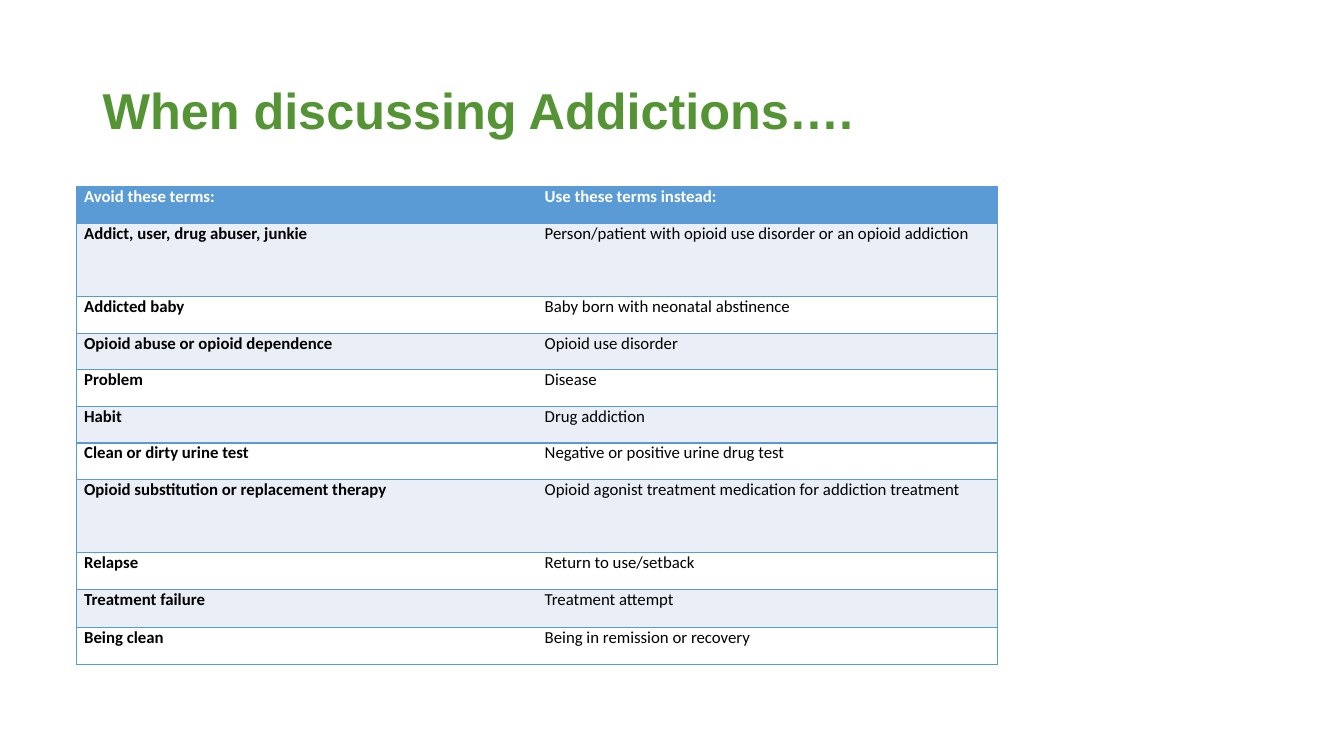
from lxml.etree import SubElement
from pptx import Presentation
from pptx.dml.color import RGBColor
from pptx.enum.text import MSO_ANCHOR
from pptx.oxml.ns import qn
from pptx.util import Pt

GREEN = RGBColor(0x55, 0x94, 0x34)
BLUE = RGBColor(0x5B, 0x9B, 0xD5)
PALE_BLUE = RGBColor(0xEA, 0xEF, 0xF7)
WHITE = RGBColor(0xFF, 0xFF, 0xFF)
BLACK = RGBColor(0x00, 0x00, 0x00)

SINGLE, DOUBLE = 26.15, 52.3
TERMS = [
    ("Avoid these terms:", "Use these terms instead:", SINGLE),
    ("Addict, user, drug abuser, junkie",
     "Person/patient with opioid use disorder or an opioid addiction", DOUBLE),
    ("Addicted baby", "Baby born with neonatal abstinence", SINGLE),
    ("Opioid abuse or opioid dependence", "Opioid use disorder", SINGLE),
    ("Problem", "Disease", SINGLE),
    ("Habit", "Drug addiction", SINGLE),
    ("Clean or dirty urine test", "Negative or positive urine drug test", SINGLE),
    ("Opioid substitution or replacement therapy",
     "Opioid agonist treatment medication for addiction treatment", DOUBLE),
    ("Relapse", "Return to use/setback", SINGLE),
    ("Treatment failure", "Treatment attempt", 27.4),
    ("Being clean", "Being in remission or recovery", SINGLE),
]


def add_run(paragraph, text, font_name, size, color, bold):
    run = paragraph.add_run()
    run.text = text
    run.font.name = font_name
    run.font.size = Pt(size)
    run.font.color.rgb = color
    run.font.bold = bold


def add_borders(cell, inner_side):
    properties = cell._tc.get_or_add_tcPr()
    for side in ("lnL", "lnR", "lnT", "lnB"):
        line = SubElement(properties, qn(f"a:{side}"), w=str(Pt(1)))
        if side == inner_side:
            SubElement(line, qn("a:noFill"))
        else:
            fill = SubElement(line, qn("a:solidFill"))
            SubElement(fill, qn("a:srgbClr"), val=str(BLUE))


presentation = Presentation()
presentation.slide_width = Pt(960)
presentation.slide_height = Pt(540)
slide = presentation.slides.add_slide(presentation.slide_layouts[6])

title = slide.shapes.add_textbox(Pt(66.2), Pt(28.8), Pt(828), Pt(104.4)).text_frame
title.word_wrap = True
title.vertical_anchor = MSO_ANCHOR.MIDDLE
title.paragraphs[0].line_spacing = 0.9
add_run(title.paragraphs[0], "When discussing Addictions….", "Arial", 36, GREEN, True)

total_height = sum(height for _, _, height in TERMS)
terms_table = slide.shapes.add_table(
    len(TERMS), 2, Pt(54.7), Pt(133.4), Pt(658), Pt(total_height)).table

for row, (avoided, preferred, height) in enumerate(TERMS):
    terms_table.rows[row].height = Pt(height)
    is_header = row == 0
    band = BLUE if is_header else PALE_BLUE if row % 2 else WHITE
    for column, term in enumerate((avoided, preferred)):
        cell = terms_table.cell(row, column)
        cell.margin_left = cell.margin_right = Pt(5.4)
        cell.margin_top = cell.margin_bottom = Pt(0)
        add_borders(cell, "lnL" if column else "lnR")
        cell.fill.solid()
        cell.fill.fore_color.rgb = band
        add_run(cell.text_frame.paragraphs[0], term, "Calibri", 12,
                WHITE if is_header else BLACK, is_header or column == 0)

presentation.save("out.pptx")
